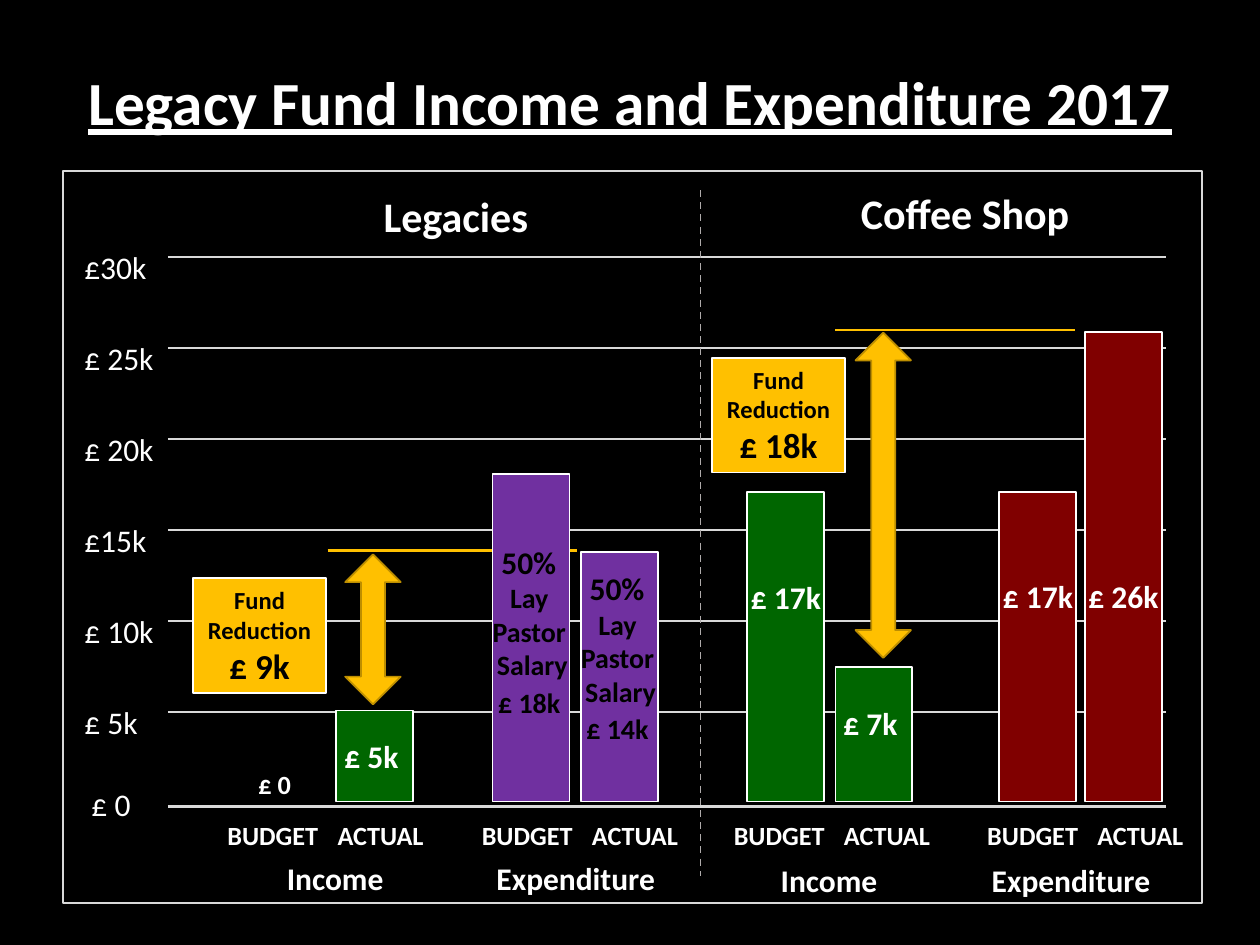
from pptx import Presentation
from pptx.dml.color import RGBColor
from pptx.enum.dml import MSO_LINE
from pptx.enum.shapes import MSO_CONNECTOR, MSO_SHAPE
from pptx.enum.text import PP_ALIGN
from pptx.oxml.ns import qn
from pptx.util import Pt
from lxml.etree import SubElement

BLACK = RGBColor(0, 0, 0)
WHITE = RGBColor(255, 255, 255)
GREY = RGBColor(0xD9, 0xD9, 0xD9)
DASH = RGBColor(0xAF, 0xAB, 0xAB)
GOLD = RGBColor(0xFF, 0xC0, 0)
BROWN = RGBColor(0xBD, 0x8E, 0)
GREEN = RGBColor(0, 0x66, 0)
RED = RGBColor(0x80, 0, 0)
PURPLE = RGBColor(0x70, 0x30, 0xA0)

TITLE = "Legacy Fund Income and Expenditure 2017"
SCALE = ["£30k", "£ 25k", "£ 20k", "£15k", "£ 10k", "£ 5k"]
HEADS = [("Legacies", 198, 108.7, 125), ("Coffee Shop", 491, 107.3, 121)]
GROUPS = [("Income", 128.9, 491), ("Expenditure", 266.4, 491),
          ("Income", 411.1, 491.8), ("Expenditure", 549.4, 491.8)]
PAIRS = [129.6, 275, 419, 563.8]
BARS = [
    (192.2, 5, GREEN, "£ 5k ", 421.2),
    (427, 17, GREEN, "£ 17k ", 330.5),
    (477.4, 7.4, GREEN, "£ 7k ", 402.5),
    (571, 17, RED, "£ 17k ", 329.8),
    (619.9, 25.8, RED, "£ 26k ", 329.8),
]
STAFF = [(281.5, 18, "£ 18k ", 310.3), (331.9, 13.7, "£ 14k ", 325.4)]
GAPS = [
    ("£ 9k", 110.2, 330.5, 197.3, 316.8, 85.7, 187.2, 329.8, 314.6),
    ("£ 18k", 406.8, 204.5, 488.9, 190.1, 185.8, 477.4, 614.2, 188.6),
]
BASE, UNIT, WIDE = 458, 10.4, 44
LEFT, RIGHT, TOP, STEP = 96, 666.3, 146.8, 52

deck = Presentation()
deck.slide_width, deck.slide_height = Pt(720), Pt(540)
slide = deck.slides.add_slide(deck.slide_layouts[6])
slide.background.fill.solid()
slide.background.fill.fore_color.rgb = BLACK
shapes = slide.shapes


def fill_text(frame, lines, color, bold=True, align=PP_ALIGN.CENTER):
    for i, (text, size) in enumerate(lines):
        para = frame.add_paragraph() if i else frame.paragraphs[0]
        para.text = text
        para.alignment = align
        font = para.font
        font.name, font.size, font.bold = "Calibri", Pt(size), bold
        font.color.rgb = color


def label(lines, x, y, w, h, color=WHITE, wrap=True, **style):
    frame = shapes.add_textbox(Pt(x), Pt(y), Pt(w), Pt(h)).text_frame
    frame.margin_left = frame.margin_right = 0
    frame.margin_top = frame.margin_bottom = 0
    frame.word_wrap = wrap
    fill_text(frame, lines, color, **style)
    return frame


def block(kind, x, y, w, h, fill, edge=WHITE, width=1):
    shape = shapes.add_shape(kind, Pt(x), Pt(y), Pt(w), Pt(h))
    shape.shadow.inherit = False
    if fill is None:
        shape.fill.background()
    else:
        shape.fill.solid()
        shape.fill.fore_color.rgb = fill
    shape.line.color.rgb = edge
    shape.line.width = Pt(width)
    return shape


def rule(x1, y1, x2, y2, color, width):
    link = shapes.add_connector(MSO_CONNECTOR.STRAIGHT, Pt(x1), Pt(y1), Pt(x2), Pt(y2))
    link.line.color.rgb = color
    link.line.width = Pt(width)
    SubElement(link._element.spPr, qn("a:effectLst"))
    return link


def bar(x, value, color):
    high = value * UNIT
    block(MSO_SHAPE.RECTANGLE, x, BASE - high, WIDE, high, color)


block(MSO_SHAPE.RECTANGLE, 36, 97.9, 650.9, 418.3, None, GREY, 1.25)
for i, text in enumerate(SCALE):
    rule(LEFT, TOP + i * STEP, RIGHT, TOP + i * STEP, GREY, 1.5)
    label([(text, 18)], 48.2, 141.8 + i * STEP, 41, 22, wrap=False,
          bold=False, align=PP_ALIGN.LEFT)
rule(LEFT, 460.8, RIGHT, 460.8, GREY, 2)
label([("£ 0", 18)], 52.3, 448.6, 67, 22, bold=False, align=PP_ALIGN.LEFT)

title = label([(TITLE, 35)], 0, 36.7, 720, 44)
title.paragraphs[0].font.underline = True
for text, x, y, w in HEADS:
    label([(text, 24)], x, y, w, 29)
rule(400.3, 108.7, 400.3, 500.4, DASH, 1).line.dash_style = MSO_LINE.DASH

for x in PAIRS:
    label([("BUDGET", 15)], x, 468, 52.6, 18, wrap=False)
    label([("ACTUAL", 15)], x + 63, 468, 49.7, 18, wrap=False)
for text, x, y in GROUPS:
    label([(text, 18)], x, y, 125.3, 22)

for cost, x, y, tipx, tipy, tall, start, end, level in GAPS:
    rule(start, level, end, level, GOLD, 1.5)
    note = block(MSO_SHAPE.RECTANGLE, x, y, 76.3, 65.5, GOLD)
    note.text_frame.word_wrap = True
    fill_text(note.text_frame, [("Fund Reduction", 14), (cost, 20)], BLACK)
    arrow = block(MSO_SHAPE.UP_DOWN_ARROW, tipx, tipy, 31.7, tall, GOLD, BROWN)
    arrow.adjustments[0], arrow.adjustments[1] = 0.385, 0.432

for x, value, color, text, y in BARS:
    bar(x, value, color)
    label([(text, 18)], x + 0.5, y, 43.2, 22)
label([("£ 0", 15)], 147.6, 439.2, 18.7, 18, wrap=False)

for x, value, cost, y in STAFF:
    bar(x, value, PURPLE)
    lines = [("50% ", 18), ("Lay ", 16), ("Pastor ", 16), ("Salary", 16), (cost, 16)]
    frame = label(lines, x - 1, y, 47.5, 101.5, BLACK, wrap=False)
    frame.paragraphs[-1].space_before = Pt(2)

deck.save("out.pptx")
